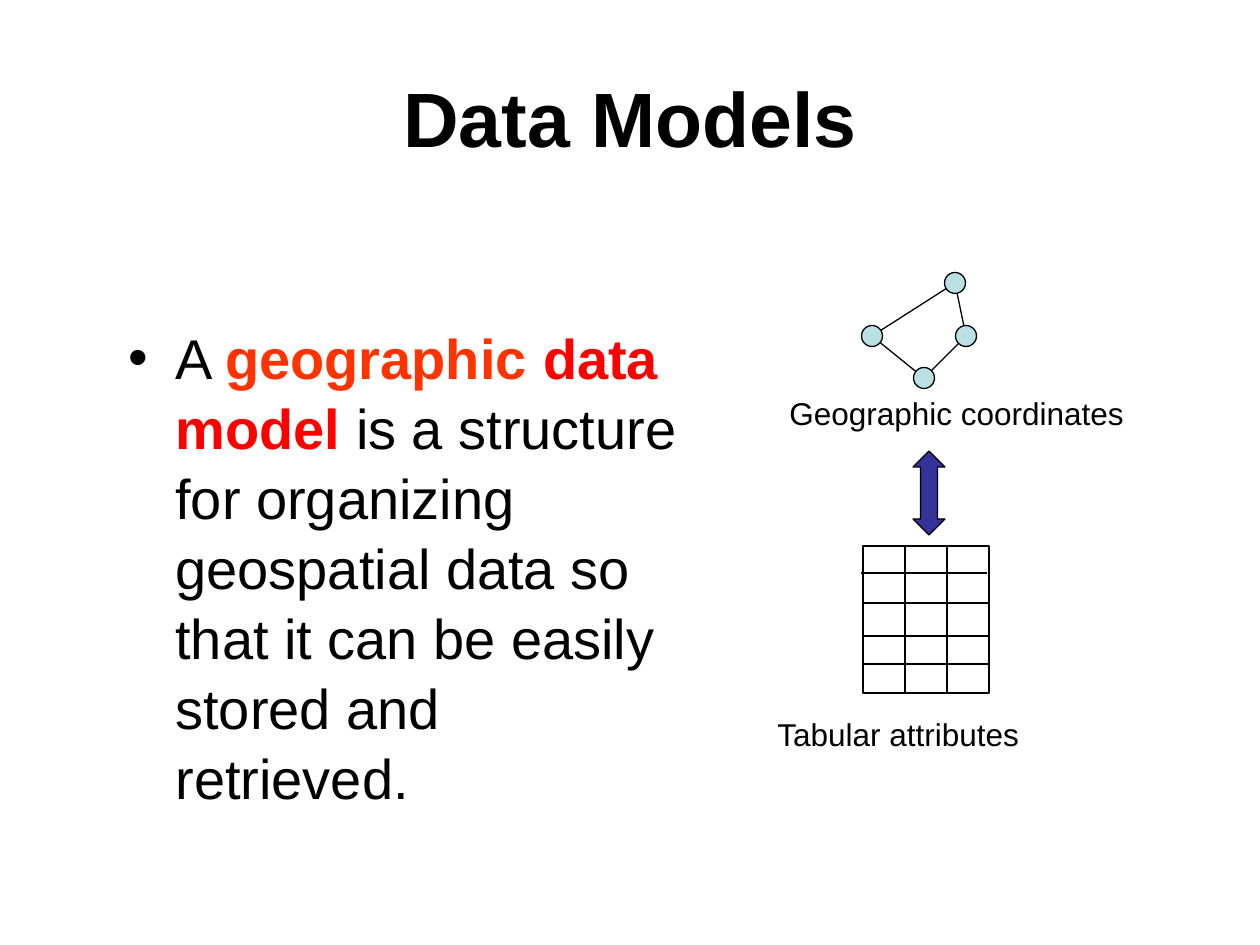
from lxml.etree import SubElement
from pptx import Presentation
from pptx.dml.color import RGBColor
from pptx.enum.shapes import MSO_CONNECTOR as Connector, MSO_SHAPE as Shape
from pptx.enum.text import MSO_ANCHOR as Anchor, PP_ALIGN as Align
from pptx.oxml.ns import qn
from pptx.util import Pt

PX = 914400 / 126


def style(item, fill=None):
    if fill:
        item.fill.solid()
        item.fill.fore_color.rgb = RGBColor.from_string(fill)
    elif hasattr(item, "fill"):
        item.fill.background()
    item.line.color.rgb = RGBColor.from_string("000000")
    item.line.width = Pt(0.75)
    if hasattr(item, "shadow"):
        item.shadow.inherit = False
    else:
        SubElement(item._element.spPr, qn("a:effectLst"))


def emu(*lengths):
    return [round(length * PX) for length in lengths]


deck = Presentation()
deck.slide_width, deck.slide_height = emu(1260, 945)
page = deck.slides.add_slide(deck.slide_layouts[6])

plain = {"size": Pt(18), "bold": False}
body = {"size": Pt(32), "bold": False}
strong = {"size": Pt(32), "bold": True}
texts = {
    "title": ((63, 38, 1134, 157), [("Data Models", "000000", {"size": Pt(44), "bold": True})]),
    "definition": ((116, 315, 574, 427), [
        ("A ", "000000", body),
        ("geographic ", "FF3300", strong),
        ("data model", "FF0000", strong),
        (" is a structure for organizing geospatial data so that it can be"
         " easily stored and retrieved.", "000000", body),
    ]),
    "coordinates": ((777, 388, 425, 113), [("Geographic coordinates", "000000", plain)]),
    "attributes": ((765, 709, 323, 63), [("Tabular attributes", "000000", plain)]),
}
boxes = {}
for name, (place, spans) in texts.items():
    box = boxes[name] = page.shapes.add_textbox(*emu(*place))
    box.text_frame.word_wrap = True
    for text, color, formats in spans:
        span = box.text_frame.paragraphs[0].add_run()
        span.text = text
        span.font.name = "Arial"
        span.font.color.rgb = RGBColor.from_string(color)
        for key, value in formats.items():
            setattr(span.font, key, value)

boxes["title"].text_frame.vertical_anchor = Anchor.MIDDLE
boxes["title"].text_frame.paragraphs[0].alignment = Align.CENTER

para = boxes["definition"].text_frame.paragraphs[0]
para.space_before = Pt(2)
para.line_spacing = 1.04
bullet_format = para._p.get_or_add_pPr()
indent, = emu(47)
bullet_format.set("marL", str(indent))
bullet_format.set("indent", str(-indent))
SubElement(bullet_format, qn("a:buFont")).set("typeface", "Arial")
SubElement(bullet_format, qn("a:buChar")).set("char", "•")

nodes = [(872, 336), (924, 378), (966, 336), (955, 283)]
edges = [(*start, *end) for start, end in zip(nodes, nodes[1:] + nodes[:1])]
left, top, width, height = 863, 546, 126, 147
rows = [(861, 573), (862, 603), (864, 636), (864, 664)]
rules = [(x, y, x + width, y) for x, y in rows]
columns = [(x, top, x, top + height) for x in (left + width // 3, left + width * 2 // 3)]

grid = page.shapes.add_shape(Shape.RECTANGLE, *emu(left, top, width, height))
style(grid)
for ends in edges + rules + columns:
    style(page.shapes.add_connector(Connector.STRAIGHT, *emu(*ends)))

diameter = 21
for x, y in nodes:
    node = page.shapes.add_shape(
        Shape.OVAL, *emu(x - diameter / 2, y - diameter / 2, diameter, diameter))
    style(node, "BBE0E3")

arrow = page.shapes.add_shape(Shape.UP_DOWN_ARROW, *emu(913, 451, 32, 84))
arrow.adjustments[0] = 0.5
arrow.adjustments[1] = 0.53
style(arrow, "333399")

deck.save("out.pptx")
